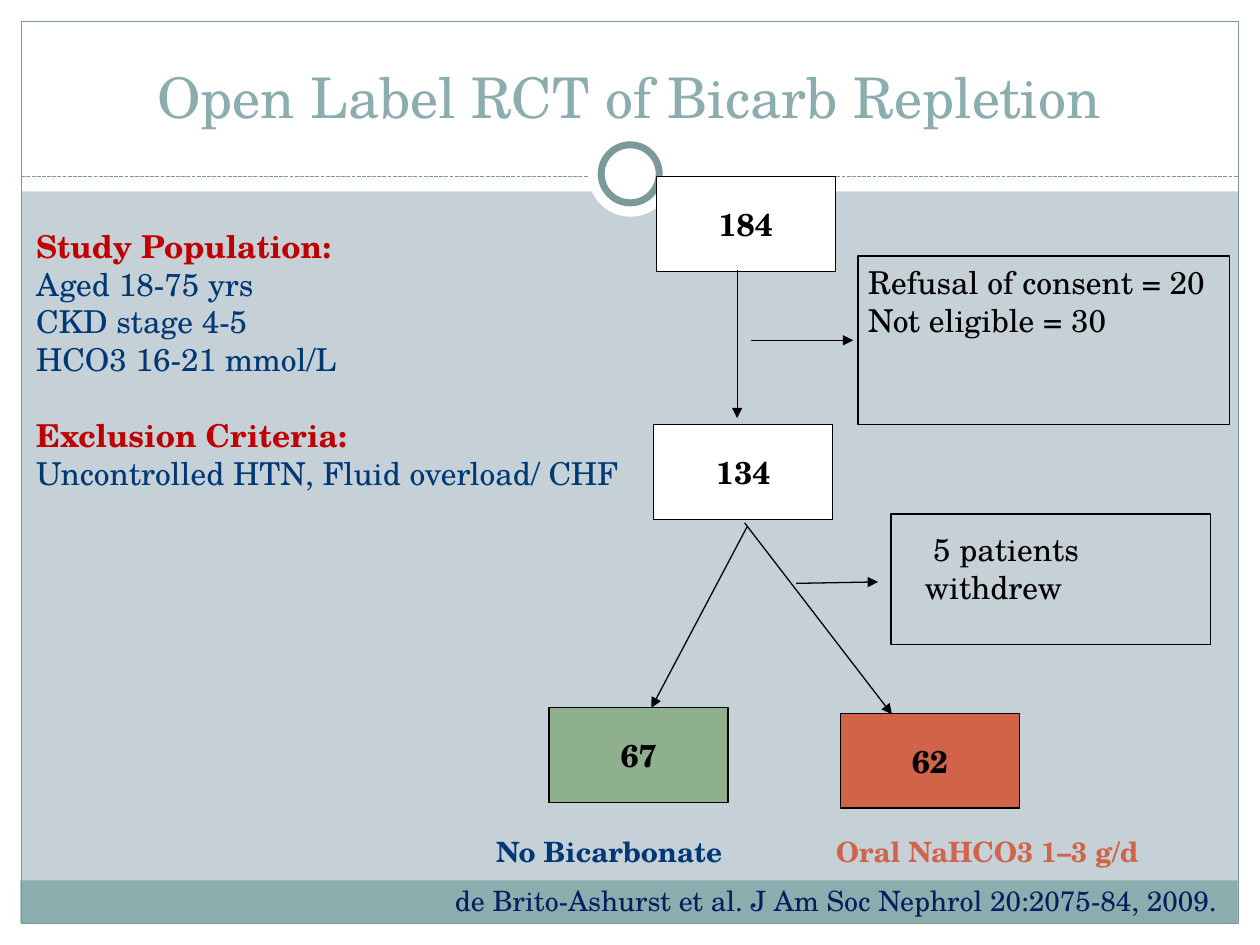
from dataclasses import dataclass

from lxml.etree import SubElement
from pptx import Presentation
from pptx.dml.color import RGBColor
from pptx.enum.dml import MSO_LINE
from pptx.enum.shapes import MSO_CONNECTOR, MSO_SHAPE
from pptx.enum.text import MSO_ANCHOR, PP_ALIGN
from pptx.oxml.ns import qn
from pptx.util import Cm, Pt


@dataclass(frozen=True)
class Theme:
    font: str = "TeX Gyre Schola"
    background: str = "C5D1D7"
    white: str = "FFFFFF"
    black: str = "000000"
    band: str = "8CADAE"
    border: str = "7C999A"
    control: str = "8FB08C"
    treatment: str = "D16349"
    heading: str = "C00000"
    body: str = "003876"
    citation: str = "002060"
    title_size: int = 32
    body_size: int = 18
    label_size: int = 16
    thin: float = 0.75
    ring: float = 4


class TrialSlide:
    def __init__(self, deck, theme):
        self.theme = theme
        self.slide = deck.slides.add_slide(deck.slide_layouts[6])
        backdrop = self.slide.background.fill
        backdrop.solid()
        backdrop.fore_color.rgb = RGBColor.from_string(theme.background)

    def style_run(self, run, color, size, bold=False):
        run.font.name = self.theme.font
        run.font.size = Pt(size)
        run.font.bold = bold
        run.font.color.rgb = RGBColor.from_string(color)

    def block(self, place, fill=None, line=None, width=None, kind=MSO_SHAPE.RECTANGLE):
        shape = self.slide.shapes.add_shape(kind, *map(Cm, place))
        shape.shadow.inherit = False
        if fill:
            shape.fill.solid()
            shape.fill.fore_color.rgb = RGBColor.from_string(fill)
        else:
            shape.fill.background()
        if line:
            shape.line.color.rgb = RGBColor.from_string(line)
            shape.line.width = Pt(width or self.theme.thin)
        else:
            shape.line.fill.background()
        return shape

    def count_box(self, left, top, count, fill):
        frame = self.block((left, top, 3.61, 1.91), fill, self.theme.black).text_frame
        frame.text = count
        frame.word_wrap = False
        frame.vertical_anchor = MSO_ANCHOR.MIDDLE
        frame.paragraphs[0].alignment = PP_ALIGN.CENTER
        self.style_run(frame.paragraphs[0].runs[0], self.theme.black,
                       self.theme.body_size, True)

    def line(self, start, end, color):
        connector = self.slide.shapes.add_connector(
            MSO_CONNECTOR.STRAIGHT, *map(Cm, (*start, *end)))
        connector.line.color.rgb = RGBColor.from_string(color)
        connector.line.width = Pt(self.theme.thin)
        SubElement(connector._element.spPr, qn("a:effectLst"))
        return connector

    def arrow(self, start, end):
        connector = self.line(start, end, self.theme.black)
        SubElement(connector.line._get_or_add_ln(), qn("a:tailEnd"), type="triangle")

    def text(self, place, content, color, size, align=PP_ALIGN.LEFT,
             anchor=MSO_ANCHOR.TOP):
        frame = self.slide.shapes.add_textbox(*map(Cm, place)).text_frame
        frame.word_wrap = True
        frame.vertical_anchor = anchor
        frame.text = content
        for paragraph in frame.paragraphs:
            paragraph.alignment = align
            for run in paragraph.runs:
                self.style_run(run, color, size)
        return frame.paragraphs


def main():
    theme = Theme()
    deck = Presentation()
    deck.slide_width, deck.slide_height = Cm(25.4), Cm(19.05)
    page = TrialSlide(deck, theme)

    # White margins, footer band and frame
    for margin in ((0, 18.62, 25.4, 0.43), (0, 0, 25.4, 3.86),
                   (0, 0, 0.43, 19.05), (24.97, 0, 0.43, 19.05)):
        page.block(margin, theme.white)
    page.block((0.41, 17.75, 24.54, 0.86), theme.band)
    page.block((0.43, 0.43, 24.54, 18.19), line=theme.border)

    # Dashed divider and ring
    divider = page.line((0.43, 3.56), (24.97, 3.56), theme.border)
    divider.line.dash_style = MSO_LINE.SQUARE_DOT
    page.block((11.86, 2.67, 1.7, 1.7), theme.white, kind=MSO_SHAPE.OVAL)
    page.block((12.12, 2.92, 1.17, 1.17), theme.white, theme.border, theme.ring,
               MSO_SHAPE.OVAL)

    # Patient flow
    for left, top, count, fill in (
            (13.23, 3.56, "184", theme.white), (13.18, 8.56, "134", theme.white),
            (11.07, 14.27, "67", theme.control), (16.94, 14.38, "62", theme.treatment)):
        page.count_box(left, top, count, fill)
    for start, end in (
            ((14.86, 5.44), (14.86, 8.43)), ((15.06, 10.62), (13.13, 14.27)),
            ((15.01, 10.54), (17.98, 14.4)), ((15.14, 6.86), (17.2, 6.86)),
            ((16.05, 11.76), (17.7, 11.73))):
        page.arrow(start, end)

    # Study arm labels, the second one set at a tab stop
    arms, = page.text((9.75, 16.69, 14.33, 0.94), "No Bicarbonate\t",
                      theme.body, theme.label_size)
    treated = arms.add_run()
    treated.text = "Oral NaHCO3 1–3 g/d"
    page.style_run(treated, theme.treatment, theme.label_size)
    for run in arms.runs:
        run.font.bold = True
    tabs = SubElement(arms._p.get_or_add_pPr(), qn("a:tabLst"))
    SubElement(tabs, qn("a:tab"), pos=str(Cm(6.85)), algn="l")

    # Patients who left the study
    page.block((17.3, 5.16, 7.49, 3.4), line=theme.black)
    page.text((17.25, 5.18, 7.44, 3.33), "Refusal of consent = 20\nNot eligible = 30",
              theme.black, theme.body_size)
    page.block((17.96, 10.36, 6.45, 2.64), line=theme.black)
    withdrawn, = page.text((18.39, 10.57, 5.97, 2.31), "5 patients\vwithdrew",
                           theme.black, theme.body_size)
    withdrawn._p.get_or_add_pPr().set("indent", str(Cm(0.17)))

    # Study criteria
    criteria = page.text(
        (0.48, 4.45, 12.6, 5.64),
        "Study Population:\nAged 18-75 yrs\nCKD stage 4-5\nHCO3 16-21 mmol/L\n"
        "Exclusion Criteria:\nUncontrolled HTN, Fluid overload/ CHF",
        theme.body, theme.body_size)
    for paragraph in criteria:
        if paragraph.text.endswith(":"):
            page.style_run(paragraph.runs[0], theme.heading, theme.body_size, True)
    criteria[4].space_before = Pt(21.5)

    # Citation and title
    page.text((8.46, 17.68, 16.33, 0.94),
              "de Brito-Ashurst et al. J Am Soc Nephrol 20:2075-84, 2009.",
              theme.citation, theme.label_size, PP_ALIGN.RIGHT)
    page.text((0.84, 0.64, 23.7, 2.11), "Open Label RCT of Bicarb Repletion",
              theme.band, theme.title_size, PP_ALIGN.CENTER, MSO_ANCHOR.BOTTOM)

    deck.save("out.pptx")


if __name__ == "__main__":
    main()
